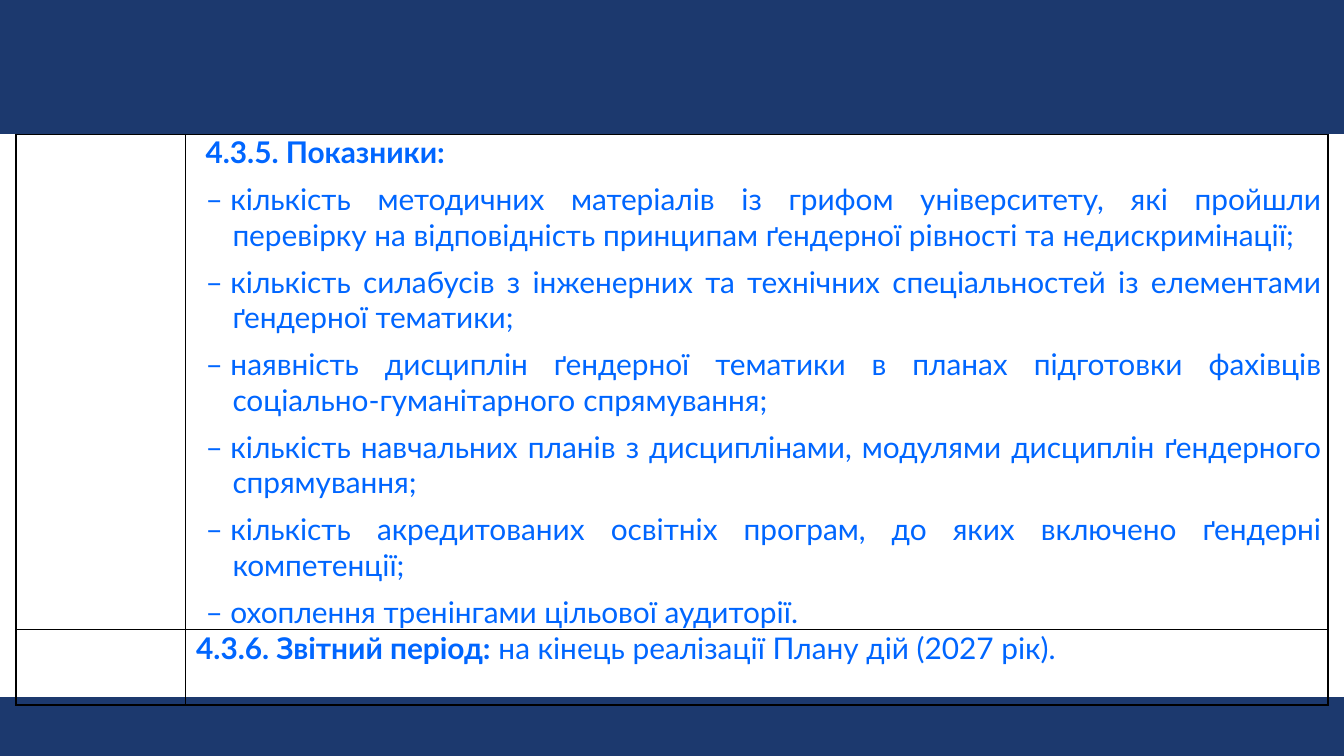
from dataclasses import dataclass

from lxml.etree import SubElement
from pptx import Presentation
from pptx.dml.color import RGBColor as RGB
from pptx.enum.shapes import MSO_SHAPE as Shape
from pptx.enum.text import PP_ALIGN as Align
from pptx.oxml.ns import qn
from pptx.util import Inches, Pt


@dataclass(frozen=True)
class Theme:
    navy: RGB = RGB(0x1C, 0x39, 0x6E)
    blue: RGB = RGB(0x00, 0x66, 0xFF)
    edge: str = "000000"
    font: str = "Lato"
    size: float = 16
    gap: float = 6
    rule: float = 1


@dataclass(frozen=True)
class Band:
    top: float
    height: float


@dataclass(frozen=True)
class Run:
    text: str
    bold: bool = False


@dataclass(frozen=True)
class Para:
    runs: tuple[Run, ...]
    left: float = 0.3
    hang: float = -0.2


THEME = Theme()
BANDS = (Band(-0.01, 1), Band(5.19, 0.43))
COLS = (1.26, 8.5)
ROWS = (3.53, 0.56)
TALL = 4.26
HARD = chr(160)  # no-break space, keeps its width in justified lines

ITEMS = (
    "кількість методичних матеріалів із грифом університету, які пройшли "
    "перевірку на відповідність принципам ґендерної рівності та недискримінації;",
    "кількість силабусів з інженерних та технічних спеціальностей "
    "із елементами ґендерної тематики;",
    "наявність дисциплін ґендерної тематики в планах підготовки фахівців "
    "соціально-гуманітарного спрямування;",
    "кількість навчальних планів з дисциплінами, модулями дисциплін "
    "ґендерного спрямування;",
    "кількість акредитованих освітніх програм, до яких включено "
    "ґендерні компетенції;",
    "охоплення тренінгами цільової аудиторії.",
)
GOALS = (
    Para((Run("4.3.5. Показники:", True),)),
    *(Para((Run(f"–{HARD}{item}"),)) for item in ITEMS),
)
TERM = (
    Para(
        (
            Run("4.3.6. Звітний період:", True),
            Run(f" на кінець реалізації Плану дій (2027{HARD}рік)."),
        ),
        left=0,
        hang=0.03,
    ),
)


def add_band(slide, band: Band) -> None:
    bar = slide.shapes.add_shape(
        Shape.RECTANGLE, Inches(-0.02), Inches(band.top),
        Inches(10.02), Inches(band.height),
    )
    bar.shadow.inherit = False
    bar.fill.solid()
    bar.fill.fore_color.rgb = THEME.navy
    bar.line.color.rgb = THEME.navy
    bar.line.width = Pt(0.75)


def style_cell(cell) -> None:
    cell.margin_left = cell.margin_right = Inches(0.05)
    cell.margin_top = cell.margin_bottom = 0
    # Borders come before the fill in the cell properties
    props = cell._tc.get_or_add_tcPr()
    for side in ("a:lnL", "a:lnR", "a:lnT", "a:lnB"):
        line = SubElement(props, qn(side), w=str(Pt(THEME.rule)))
        fill = SubElement(line, qn("a:solidFill"))
        SubElement(fill, qn("a:srgbClr"), val=THEME.edge)
    cell.fill.background()


def write_cell(cell, paras: tuple[Para, ...]) -> None:
    frame = cell.text_frame
    for num, para in enumerate(paras):
        block = frame.add_paragraph() if num else frame.paragraphs[0]
        block.alignment = Align.JUSTIFY
        block.space_after = Pt(THEME.gap)
        props = block._p.get_or_add_pPr()
        props.set("marL", str(Inches(para.left)))
        props.set("indent", str(Inches(para.hang)))
        for part in para.runs:
            run = block.add_run()
            run.text = part.text
            run.font.name = THEME.font
            run.font.size = Pt(THEME.size)
            run.font.bold = part.bold
            run.font.color.rgb = THEME.blue


def add_grid(slide, texts: tuple[tuple[Para, ...], ...]) -> None:
    frame = slide.shapes.add_table(
        len(ROWS), len(COLS), Inches(0.12), Inches(1),
        Inches(sum(COLS)), Inches(TALL),
    )
    grid = frame.table
    grid.first_row = grid.horz_banding = False
    for col, width in zip(grid.columns, COLS):
        col.width = Inches(width)
    for row, height in zip(grid.rows, ROWS):
        row.height = Inches(height)
    # The frame is taller than its rows, as the text needs more room
    frame.height = Inches(TALL)
    for cell in grid.iter_cells():
        style_cell(cell)
    for num, paras in enumerate(texts):
        write_cell(grid.cell(num, 1), paras)


def main() -> None:
    deck = Presentation()
    deck.slide_width = Inches(10)
    deck.slide_height = deck.slide_width * 9 // 16
    slide = deck.slides.add_slide(deck.slide_layouts[6])

    # Top and bottom bands
    for band in BANDS:
        add_band(slide, band)

    # Indicators and reporting period
    add_grid(slide, (GOALS, TERM))
    deck.save("out.pptx")


if __name__ == "__main__":
    main()
